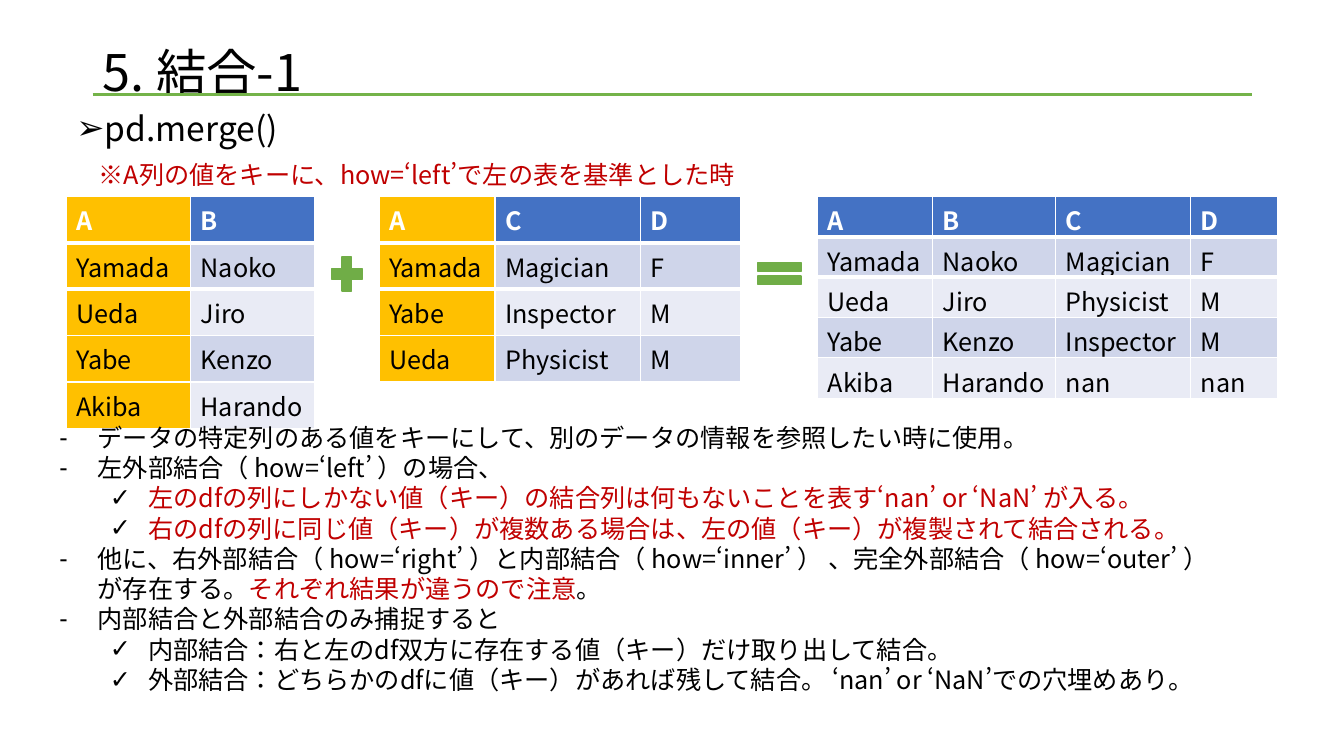
from lxml import etree
from pptx import Presentation
from pptx.dml.color import RGBColor
from pptx.enum import lang, shapes, text
from pptx.oxml.ns import qn
from pptx.util import Inches, Pt

FONT = "Noto Sans CJK JP"
JAPANESE = lang.MSO_LANGUAGE_ID.JAPANESE
BLACK = RGBColor(0x00, 0x00, 0x00)
WHITE = RGBColor(0xFF, 0xFF, 0xFF)
RED = RGBColor(0xC0, 0x00, 0x00)
GREEN = RGBColor(0x70, 0xAD, 0x47)
RULE_GREEN = RGBColor(0x74, 0xB3, 0x49)
GOLD = RGBColor(0xFF, 0xC0, 0x00)
BLUE = RGBColor(0x44, 0x72, 0xC4)
BANDS = [RGBColor(0xE9, 0xEB, 0xF5), RGBColor(0xCF, 0xD5, 0xEA)]

TITLE = "5. 結合-1"
FUNCTION = "pd.merge()"
CONDITION = "※A列の値をキーに、how=‘left’で左の表を基準とした時"

LEFT_ROWS = [("A", "B"), ("Yamada", "Naoko"), ("Ueda", "Jiro"),
             ("Yabe", "Kenzo"), ("Akiba", "Harando")]
RIGHT_ROWS = [("A", "C", "D"), ("Yamada", "Magician", "F"),
              ("Yabe", "Inspector", "M"), ("Ueda", "Physicist", "M")]
MERGED_ROWS = [("A", "B", "C", "D"),
               ("Yamada", "Naoko", "Magician", "F"),
               ("Ueda", "Jiro", "Physicist", "M"),
               ("Yabe", "Kenzo", "Inspector", "M"),
               ("Akiba", "Harando", "nan", "nan")]

# left, column widths, row height, bottom margin, key column, rows
TABLES = [
    (0.66, (1.23, 1.23), 0.46, 0.05, True, LEFT_ROWS),
    (3.76, (1.15, 1.44, 1), 0.46, 0.05, True, RIGHT_ROWS),
    (8.11, (1.14, 1.22, 1.34, 0.86), 0.4, 0, False, MERGED_ROWS),
]
TABLE_TOP = 1.95

SIGNS = [
    (shapes.MSO_SHAPE.MATH_PLUS, 3.23, 2.49, 0.42, 0.46),
    (shapes.MSO_SHAPE.MATH_EQUAL, 7.44, 2.53, 0.58, 0.37),
]

NOTES = [
    (0, [("データの特定列のある値をキーにして、別のデータの情報を参照したい時に使用。", BLACK)]),
    (0, [("左外部結合（ how=‘left’ ）の場合、", BLACK)]),
    (1, [("左のdfの列にしかない値（キー）の結合列は何もないことを表す‘nan’ or ‘NaN’ が入る。", RED)]),
    (1, [("右のdfの列に同じ値（キー）が複数ある場合は、左の値（キー）が複製されて結合される。", RED)]),
    (0, [("他に、右外部結合（ how=‘right’ ）と内部結合（ how=‘inner’ ） 、完全外部結合（ how=‘outer’ ）", BLACK),
         ("\n", BLACK), ("が存在する。", BLACK),
         ("それぞれ結果が違うので注意", RED), ("。", BLACK)]),
    (0, [("内部結合と外部結合のみ捕捉すると", BLACK)]),
    (1, [("内部結合：右と左のdf双方に存在する値（キー）だけ取り出して結合。", BLACK)]),
    (1, [("外部結合：どちらかのdfに値（キー）があれば残して結合。 ‘nan’ or ‘NaN’での穴埋めあり。", BLACK)]),
]
NOTE_BULLETS = "-✓"


def style(para, size, color, bold=False):
    font = para.font
    font.name, font.size, font.bold = FONT, Pt(size), bold
    font.color.rgb = color
    east_asian = etree.Element(qn("a:ea"), typeface=FONT)
    font._element.find(qn("a:latin")).addnext(east_asian)
    for span in para.runs:
        span.font.language_id = JAPANESE


def add_bullet(para, mark, indent, hanging):
    props = para._p.get_or_add_pPr()
    props.set("marL", str(Inches(indent)))
    props.set("indent", str(-Inches(hanging)))
    bullet_color = etree.Element(qn("a:buClr"))
    etree.SubElement(bullet_color, qn("a:srgbClr"), val=str(BLACK))
    bullet_font = etree.Element(qn("a:buFont"), typeface="Arial")
    bullet = etree.Element(qn("a:buChar"), char=mark)
    position = len(props.findall(qn("a:lnSpc")) + props.findall(qn("a:spcBef")))
    for offset, node in enumerate((bullet_color, bullet_font, bullet)):
        props.insert(position + offset, node)


def add_text_box(page, left, top, width, height):
    box = page.shapes.add_textbox(*map(Inches, (left, top, width, height)))
    box.text_frame.word_wrap = True
    return box.text_frame


def add_title(page):
    title = page.shapes.title
    title.left, title.top = Inches(0.92), Inches(0.4)
    title.width, title.height = Inches(11.5), Inches(0.7)
    title.text_frame.text = TITLE
    title.text_frame.vertical_anchor = text.MSO_ANCHOR.MIDDLE
    para = title.text_frame.paragraphs[0]
    para.alignment = text.PP_ALIGN.LEFT
    para.line_spacing = 0.9
    style(para, 36, BLACK)
    rule = page.shapes.add_connector(
        shapes.MSO_CONNECTOR.STRAIGHT,
        Inches(0.92), Inches(0.94), Inches(12.42), Inches(0.94))
    rule.line.color.rgb = RULE_GREEN
    rule.line.width = Pt(2.25)
    etree.SubElement(rule._element.spPr, qn("a:effectLst"))


def add_headings(page):
    para = add_text_box(page, 0.66, 1.1, 12.01, 0.44).paragraphs[0]
    para.text = FUNCTION
    para.line_spacing = 0.8
    para.space_before = Pt(10)
    style(para, 24, BLACK)
    add_bullet(para, "➢", 0.25, 0.25)
    para = add_text_box(page, 0.88, 1.53, 6.99, 0.4).paragraphs[0]
    para.text = CONDITION
    style(para, 18, RED)


def set_border(cell, side, width):
    border = etree.Element(qn("a:" + side), w=str(Pt(width)))
    fill = etree.SubElement(border, qn("a:solidFill"))
    etree.SubElement(fill, qn("a:srgbClr"), val=str(WHITE))
    cell._tc.get_or_add_tcPr().insert(0, border)


def add_data_table(page, left, widths, row_height, below, keyed, rows):
    table = page.shapes.add_table(
        len(rows), len(widths), Inches(left), Inches(TABLE_TOP),
        Inches(sum(widths)), Inches(row_height * len(rows))).table
    for column, width in zip(table.columns, widths):
        column.width = Inches(width)
    for r, row in enumerate(rows):
        table.rows[r].height = Inches(row_height)
        for c, value in enumerate(row):
            cell = table.cell(r, c)
            cell.text = value
            cell.margin_top, cell.margin_bottom = Inches(0.05), Inches(below)
            cell.fill.solid()
            plain = BLUE if r == 0 else BANDS[r % 2]
            cell.fill.fore_color.rgb = GOLD if keyed and c == 0 else plain
            if r == 0:
                set_border(cell, "lnB", 3)
            elif r == 1:
                set_border(cell, "lnT", 3)
            style(cell.text_frame.paragraphs[0], 18,
                  WHITE if r == 0 else BLACK, r == 0)


def add_sign(page, kind, *place):
    sign = page.shapes.add_shape(kind, *map(Inches, place))
    sign.shadow.inherit = False
    sign.fill.solid()
    sign.fill.fore_color.rgb = GREEN
    sign.line.color.rgb = GREEN
    sign.line.width = Pt(1)


def add_notes(page):
    frame = add_text_box(page, 0.49, 4.14, 12.35, 2.83)
    for i, (level, spans) in enumerate(NOTES):
        para = frame.add_paragraph() if i else frame.paragraphs[0]
        para.level = level
        para.line_spacing = Pt(21.6)
        for words, color in spans:
            if words == "\n":
                para.add_line_break()
                continue
            span = para.add_run()
            span.text = words
            if color != spans[0][1]:
                span.font.color.rgb = color
        style(para, 18, spans[0][1])
        add_bullet(para, NOTE_BULLETS[level], 0.38 + 0.5 * level, 0.38)


def main():
    deck = Presentation()
    deck.slide_width, deck.slide_height = Inches(13.33), Inches(7.5)
    page = deck.slides.add_slide(deck.slide_layouts[5])
    add_title(page)
    add_headings(page)
    for table in TABLES:
        add_data_table(page, *table)
    for sign in SIGNS:
        add_sign(page, *sign)
    add_notes(page)
    deck.save("out.pptx")


if __name__ == "__main__":
    main()
